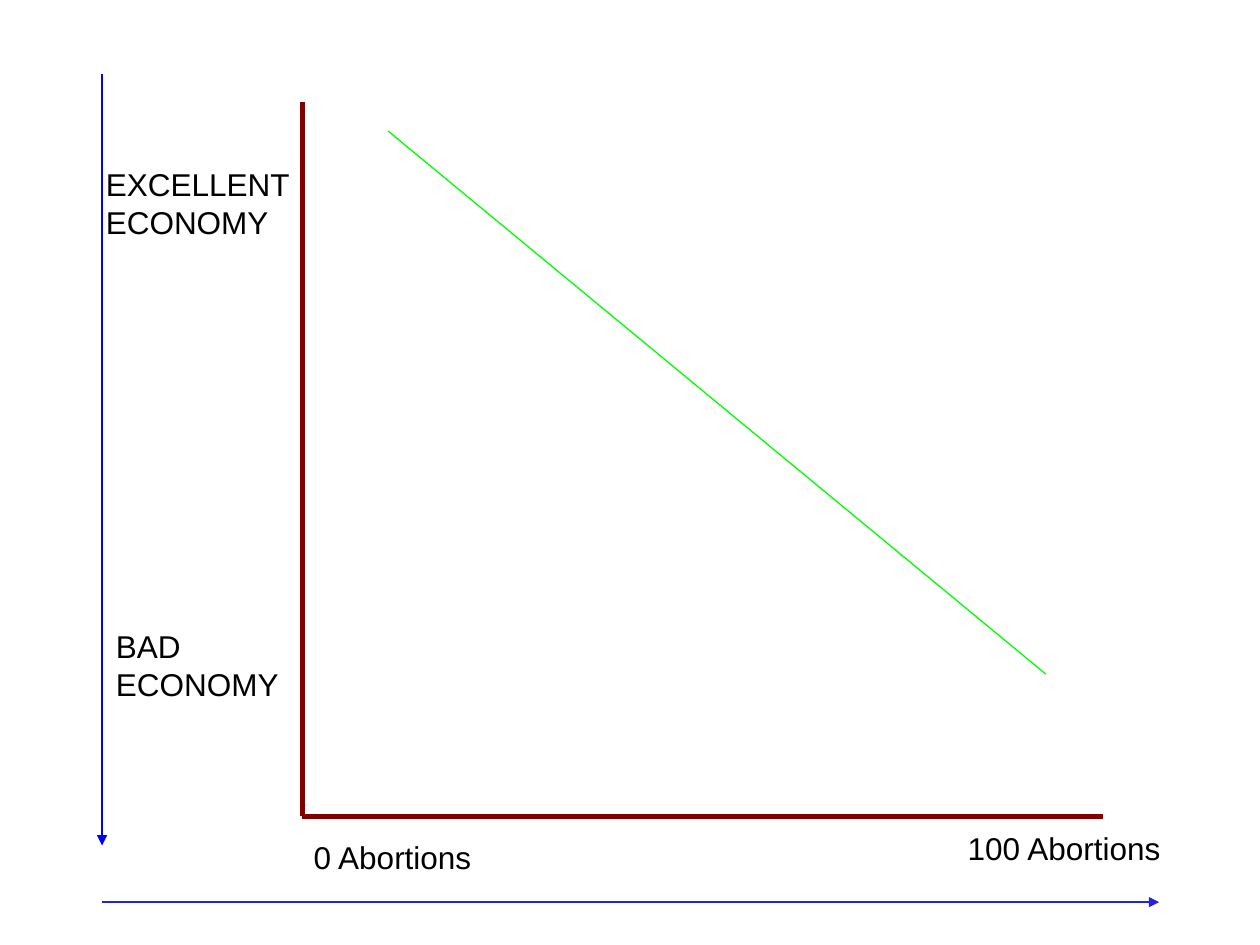
from lxml import etree
from pptx import Presentation
from pptx import util as u
from pptx.dml.color import RGBColor
from pptx.enum import shapes, text
from pptx.oxml.ns import qn

COLORS = {"axis": "800000", "trend": "00FF00", "down": "0000FF",
          "right": "2323DC", "text": "000000"}

prs = Presentation()
prs.slide_width, prs.slide_height = u.Inches(10), u.Inches(7.5)
s = prs.slides.add_slide(prs.slide_layouts[6])

# Axes, trend line and direction arrows: start, end, colour, width, arrowhead
origin = (2.4, 6.48)
lines = [
    ((2.4, 0.81), origin, "axis", 2.89, False),
    (origin, (8.75, 6.48), "axis", 2.89, False),
    ((3.08, 1.04), (8.3, 5.35), "trend", 0.75, False),
    ((0.81, 0.59), (0.81, 6.71), "down", 0.75, True),
    ((0.81, 7.16), (9.2, 7.16), "right", 0.75, True),
]
for start, end, color, width, arrow in lines:
    ends = [u.Inches(v) for v in start + end]
    line = s.shapes.add_connector(shapes.MSO_CONNECTOR.STRAIGHT, *ends)
    line.line.color.rgb = RGBColor.from_string(COLORS[color])
    line.line.width = u.Pt(width)
    if arrow:
        etree.SubElement(line.line._get_or_add_ln(), qn("a:tailEnd"), type="triangle")
    etree.SubElement(line._element.spPr, qn("a:effectLst"))

# Axis labels: left, top, width, height, paragraphs
labels = [
    (7.59, 6.52, 1.75, 0.34, ["100 Abortions"]),
    (0.75, 1.25, 1.7, 0.6, ["EXCELLENT", "ECONOMY"]),
    (0.83, 4.92, 1.88, 0.6, ["BAD", "ECONOMY"]),
    (2.4, 6.59, 1.5, 0.34, ["0 Abortions"]),
]
for *box, paragraphs in labels:
    sp = s.shapes.add_textbox(*[u.Inches(v) for v in box])
    tf = sp.text_frame
    tf.word_wrap = True
    tf.vertical_anchor = text.MSO_ANCHOR.TOP
    tf.margin_left = tf.margin_right = u.Inches(0.09)
    tf.margin_top, tf.margin_bottom = u.Inches(0.06), u.Inches(0.04)
    for i, words in enumerate(paragraphs):
        p = tf.add_paragraph() if i else tf.paragraphs[0]
        r = p.add_run()
        r.text = words
        r.font.name, r.font.size = "Arial", u.Pt(18)
        r.font.color.rgb = RGBColor.from_string(COLORS["text"])

prs.save("out.pptx")
